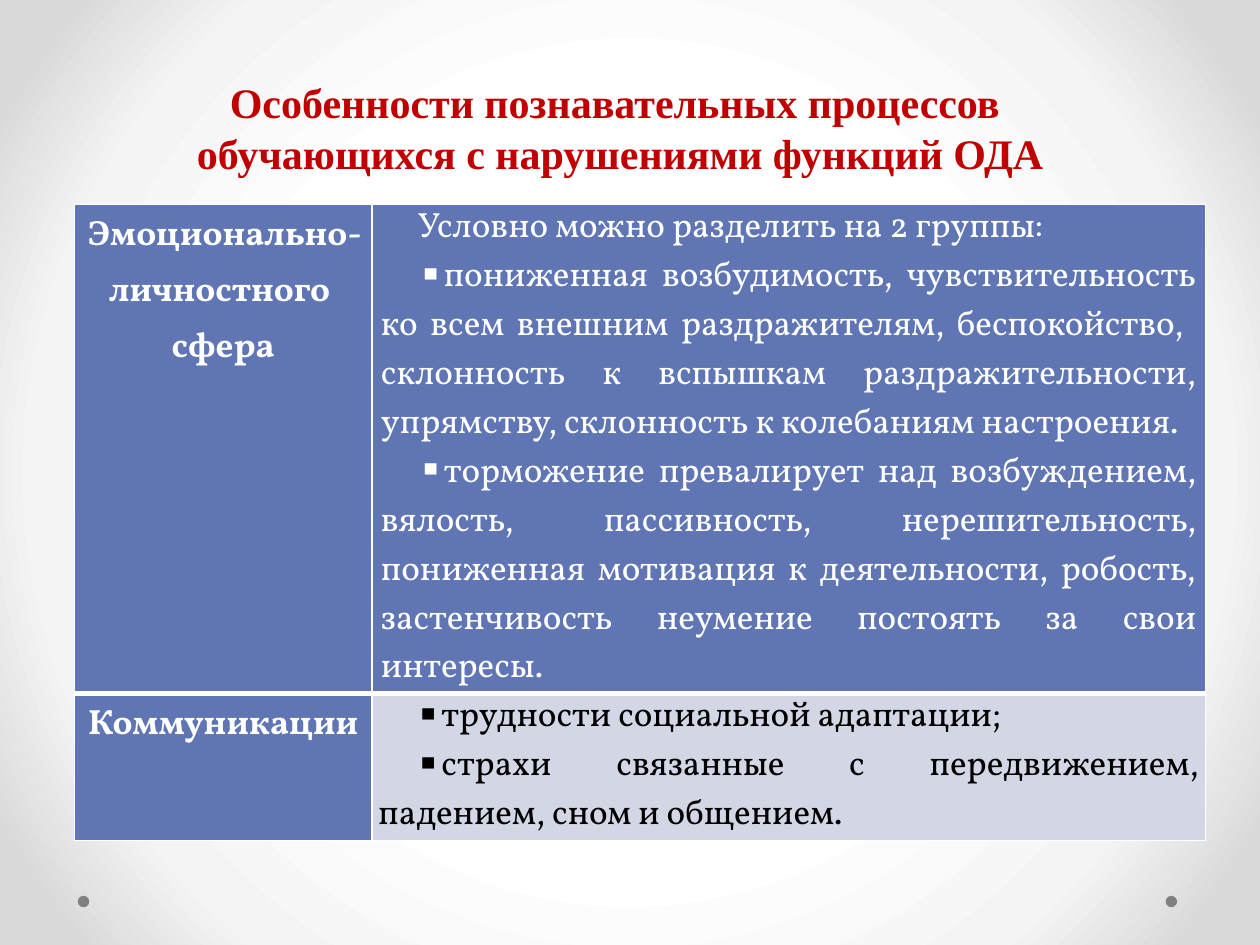
from lxml.etree import SubElement
from pptx import Presentation
from pptx.dml.color import RGBColor
from pptx.enum.shapes import MSO_SHAPE as Shape
from pptx.enum.text import MSO_ANCHOR as Anchor, PP_ALIGN as Align
from pptx.oxml import parse_xml
from pptx.oxml.ns import nsdecls, qn
from pptx.util import Cm, Pt

WHITE = RGBColor(0xFF, 0xFF, 0xFF)
BLACK = RGBColor(0x00, 0x00, 0x00)
RED = RGBColor(0xC0, 0x00, 0x00)
BLUE = RGBColor(0x60, 0x76, 0xB4)
PALE = RGBColor(0xD2, 0xD6, 0xE5)
GRAY = RGBColor(0x80, 0x80, 0x80)
BACKGROUND_STOPS = ((50, WHITE), (76, RGBColor(0xF4, 0xF4, 0xF4)),
                    (92, RGBColor(0xDA, 0xDA, 0xDA)))
TITLE_FONT = "Times New Roman"
BODY_FONT = "Vollkorn"

TITLE_LINES = ("Особенности познавательных процессов ",
               "обучающихся с нарушениями функций ОДА")
EMOTIONAL_HEADING = ("Эмоционально-личностного ", "сфера")
EMOTIONAL_INTRO = ("Условно можно разделить на 2 группы:",)
EMOTIONAL_GROUPS = (
    "пониженная возбудимость, чувствительность ко всем внешним раздражителям, "
    "беспокойство,  склонность к вспышкам раздражительности, упрямству, "
    "склонность к колебаниям настроения.",
    "торможение превалирует над возбуждением, вялость, пассивность, "
    "нерешительность, пониженная мотивация к деятельности, робость, "
    "застенчивость неумение постоять за свои интересы.",
)
COMMUNICATION_HEADING = ("Коммуникации",)
COMMUNICATION_ITEMS = (
    "трудности социальной адаптации;",
    "страхи связанные с передвижением, падением, сном и общением.",
)


def paint_background(slide):
    """Fill the slide with a circular gradient from its centre."""
    stops = "".join(
        f'<a:gs pos="{position * 1000}"><a:srgbClr val="{color}"/></a:gs>'
        for position, color in BACKGROUND_STOPS)
    gradient = parse_xml(
        f'<a:gradFill {nsdecls("a")} rotWithShape="1"><a:gsLst>{stops}</a:gsLst>'
        '<a:path path="circle"><a:fillToRect l="50000" t="50000" r="50000" '
        'b="50000"/></a:path></a:gradFill>')
    fill = slide.background.fill
    fill.solid()
    properties = slide.background._cSld.bg.bgPr
    properties.replace(properties.find(qn("a:solidFill")), gradient)


def add_corner_dots(slide, left, top, width, diameter):
    """Place a dot at each end of the given strip."""
    for dot_left in (left, left + width - diameter):
        dot = slide.shapes.add_shape(Shape.OVAL, dot_left, top, diameter, diameter)
        dot.shadow.inherit = False
        dot.fill.solid()
        dot.fill.fore_color.rgb = GRAY
        dot.line.fill.background()


def add_run(paragraph, text, font_name, size, color, bold):
    """Append one formatted run."""
    run = paragraph.add_run()
    run.text = text
    run.font.name = font_name
    run.font.size = Pt(size)
    run.font.bold = bold
    run.font.color.rgb = color


def fill_title(slide, left, top, width, height):
    """Move the title placeholder into its box and write its lines."""
    title = slide.shapes.title
    title.left, title.top, title.width, title.height = left, top, width, height
    frame = title.text_frame
    frame.vertical_anchor = Anchor.BOTTOM
    paragraph = frame.paragraphs[0]
    paragraph.alignment = Align.CENTER
    for index, line in enumerate(TITLE_LINES):
        if index:
            paragraph.add_line_break()
        add_run(paragraph, line, TITLE_FONT, 24, RED, True)


def style_cell(cell, color, margin, top_width, bottom_width):
    """Set the fill, margins and white borders of a cell."""
    cell.fill.solid()
    cell.fill.fore_color.rgb = color
    cell.margin_left = cell.margin_right = margin
    cell.margin_top = cell.margin_bottom = 0
    properties = cell._tc.get_or_add_tcPr()
    borders = (("lnL", 1), ("lnR", 1), ("lnT", top_width), ("lnB", bottom_width))
    for index, (side, width) in enumerate(borders):
        properties.insert(index, parse_xml(
            f'<a:{side} {nsdecls("a")} w="{Pt(width)}"><a:solidFill>'
            f'<a:srgbClr val="{WHITE}"/></a:solidFill></a:{side}>'))


def next_paragraph(cell):
    """Return the first paragraph while it is empty, otherwise a new one."""
    frame = cell.text_frame
    first = frame.paragraphs[0]
    return frame.add_paragraph() if first.runs else first


def write_heading(cell, lines):
    """Write centred bold lines in a heading cell."""
    for line in lines:
        paragraph = next_paragraph(cell)
        paragraph.alignment = Align.CENTER
        paragraph.line_spacing = 1.15
        add_run(paragraph, line, BODY_FONT, 20, WHITE, True)


def write_details(cell, lines, color, bullet=None):
    """Write justified paragraphs with a first-line indent."""
    for line in lines:
        paragraph = next_paragraph(cell)
        paragraph.alignment = Align.JUSTIFY
        properties = paragraph._p.get_or_add_pPr()
        properties.set("marL", "0")
        properties.set("indent", str(Cm(0.74)))
        if bullet:
            SubElement(properties, qn("a:buChar"), char=bullet)
        add_run(paragraph, line, BODY_FONT, 20, color, False)


def add_features_table(slide, left, top, width, height):
    """Build the table of spheres and their features."""
    table = slide.shapes.add_table(2, 2, left, top, width, height).table
    heading_width, first_height = Cm(6), Cm(8.97)
    table.columns[0].width = heading_width
    table.columns[1].width = width - heading_width
    table.rows[0].height = first_height
    table.rows[1].height = height - first_height

    style_cell(table.cell(0, 0), BLUE, Cm(0.18), 1, 3)
    style_cell(table.cell(0, 1), BLUE, Cm(0.18), 1, 3)
    style_cell(table.cell(1, 0), BLUE, Cm(0.18), 3, 1)
    style_cell(table.cell(1, 1), PALE, Cm(0.13), 3, 1)

    write_heading(table.cell(0, 0), EMOTIONAL_HEADING)
    write_details(table.cell(0, 1), EMOTIONAL_INTRO, WHITE)
    write_details(table.cell(0, 1), EMOTIONAL_GROUPS, WHITE, "▪")
    write_heading(table.cell(1, 0), COMMUNICATION_HEADING)
    write_details(table.cell(1, 1), COMMUNICATION_ITEMS, BLACK, "▪")


def main():
    """Build and save the presentation."""
    presentation = Presentation()
    presentation.slide_width, presentation.slide_height = Cm(25.4), Cm(19.05)
    slide = presentation.slides.add_slide(presentation.slide_layouts[5])
    paint_background(slide)
    add_corner_dots(slide, Cm(1.57), Cm(18.06), Cm(22.16), Cm(0.23))
    fill_title(slide, Cm(1.9), Cm(1.12), Cm(21.2), Cm(2.59))
    add_features_table(slide, Cm(1.5), Cm(4.12), Cm(22.8), Cm(11.87))
    presentation.save("out.pptx")


if __name__ == "__main__":
    main()
